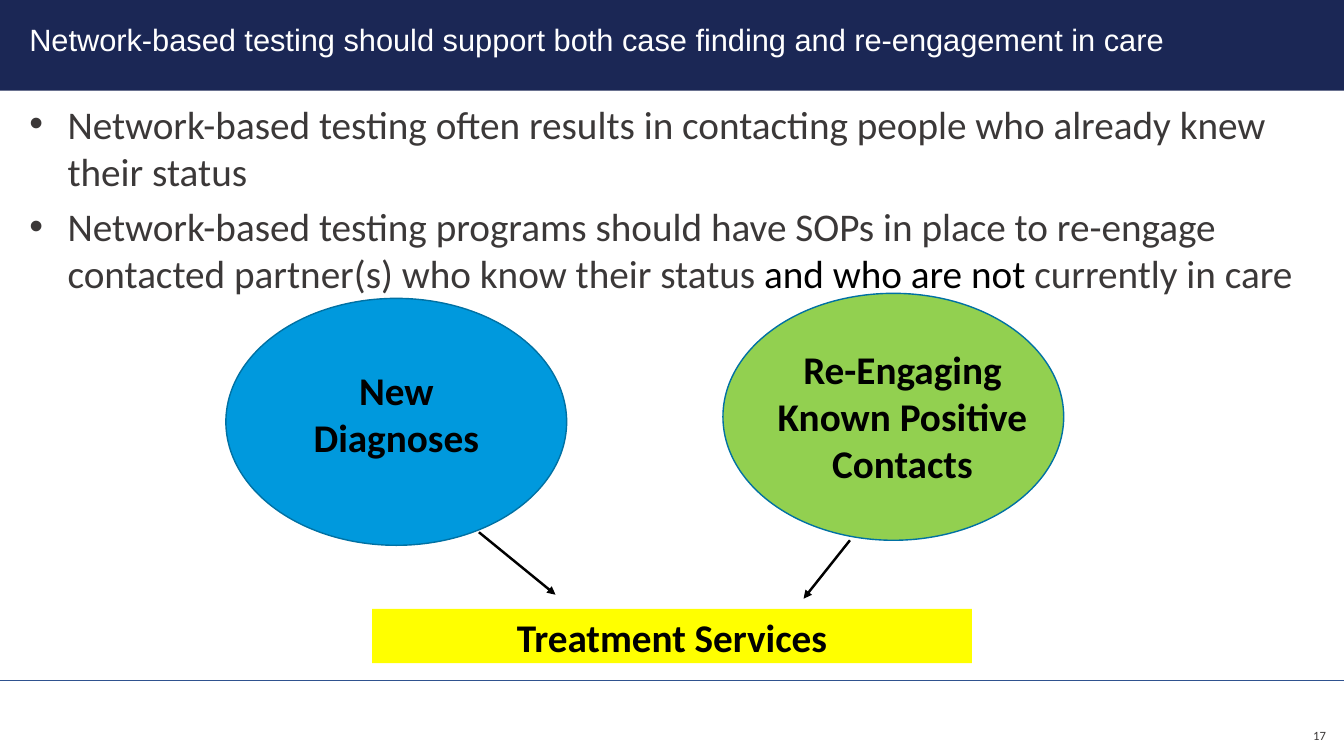
from lxml import etree
from pptx import Presentation
from pptx.dml.color import RGBColor
from pptx.enum.shapes import MSO_CONNECTOR, MSO_SHAPE
from pptx.enum.text import MSO_ANCHOR, MSO_AUTO_SIZE, PP_ALIGN
from pptx.oxml.ns import qn
from pptx.util import Inches, Pt

STRAIGHT = MSO_CONNECTOR.STRAIGHT
RECT, ELLIPSE = MSO_SHAPE.RECTANGLE, MSO_SHAPE.OVAL
TOP, MIDDLE = MSO_ANCHOR.TOP, MSO_ANCHOR.MIDDLE
LEFT, CENTER, RIGHT = PP_ALIGN.LEFT, PP_ALIGN.CENTER, PP_ALIGN.RIGHT
NO_AUTOFIT = MSO_AUTO_SIZE.NONE

NAVY = RGBColor(0x1B, 0x27, 0x55)
GRAY = RGBColor(0x3B, 0x38, 0x38)
RULE_BLUE = RGBColor(0x2F, 0x52, 0x8F)
BLUE = RGBColor(0x00, 0x99, 0xDD)
OUTLINE_BLUE = RGBColor(0x00, 0x71, 0xA3)
GREEN = RGBColor(0x92, 0xD0, 0x50)
YELLOW = RGBColor(0xFF, 0xFF, 0x00)
BLACK = RGBColor(0, 0, 0)
WHITE = RGBColor(0xFF, 0xFF, 0xFF)

SLIDE_W, SLIDE_H = 13.33, 7.5
TITLE = "Network-based testing should support both case finding and re-engagement in care"
BULLETS = [
    [("Network-based testing often results in contacting people who already knew "
      "their status", GRAY)],
    [("Network-based testing programs should have SOPs in place to re-engage "
      "contacted partner(s) who know their status ", GRAY),
     ("and who are not", BLACK),
     (" currently in care", GRAY)],
]


def inches(*values):
    return [Inches(v) for v in values]


def add_run(p, text, size, color, font="Calibri", bold=False):
    r = p.add_run()
    r.text = text
    r.font.name = font
    r.font.size = Pt(size)
    r.font.bold = bold
    r.font.color.rgb = color


def add_box(slide, kind, at, fill, line=None):
    sp = slide.shapes.add_shape(kind, *inches(*at))
    sp.shadow.inherit = False
    sp.fill.solid()
    sp.fill.fore_color.rgb = fill
    if line is None:
        sp.line.fill.background()
    else:
        sp.line.color.rgb = line
        sp.line.width = Pt(1)
    return sp


def set_label(sp, text, size=28, color=BLACK, bold=True, align=CENTER, anchor=TOP):
    tf = sp.text_frame
    tf.word_wrap = True
    tf.vertical_anchor = anchor
    p = tf.paragraphs[0]
    p.alignment = align
    add_run(p, text, size, color, bold=bold)


def add_label(slide, at, text, **style):
    set_label(slide.shapes.add_textbox(*inches(*at)), text, **style)


def add_line(slide, start, end, color, width, arrow=False):
    cx = slide.shapes.add_connector(STRAIGHT, *inches(*start, *end))
    cx.line.color.rgb = color
    cx.line.width = Pt(width)
    if arrow:
        ln = cx.line._get_or_add_ln()
        etree.SubElement(ln, qn("a:tailEnd"), type="triangle")
    etree.SubElement(cx._element.spPr, qn("a:effectLst"))


def place_placeholder(sp, at, anchor):
    """Move a placeholder and return its frame without margins."""
    sp.left, sp.top, sp.width, sp.height = inches(*at)
    tf = sp.text_frame
    tf.margin_left = tf.margin_right = tf.margin_top = tf.margin_bottom = 0
    tf.word_wrap = True
    tf.auto_size = NO_AUTOFIT
    tf.vertical_anchor = anchor
    return tf


def fill_title(slide):
    tf = place_placeholder(slide.shapes.title, (0.29, 0.21, 12.79, 0.37), TOP)
    p = tf.paragraphs[0]
    p.alignment = LEFT
    add_run(p, TITLE, 22, WHITE, font="Arial")


def fill_bullets(slide):
    tf = place_placeholder(slide.placeholders[1], (0.29, 0.99, 12.7, 1.97), TOP)
    for i, runs in enumerate(BULLETS):
        p = tf.add_paragraph() if i else tf.paragraphs[0]
        pPr = p._p.get_or_add_pPr()
        pPr.set("marL", str(Inches(0.38)))
        pPr.set("indent", str(-Inches(0.38)))
        etree.SubElement(pPr, qn("a:buFont"), typeface="Arial")
        etree.SubElement(pPr, qn("a:buChar"), char="•")
        p.space_before = Pt(0)
        p.space_after = Pt(6)
        for text, color in runs:
            add_run(p, text, 28, color)


def add_frame(slide):
    """Header band behind the title, footer rule and slide number."""
    band = add_box(slide, RECT, (0, 0, SLIDE_W, 0.9), NAVY)
    slide.shapes._spTree.insert(2, band._element)
    add_line(slide, (0, 6.75), (SLIDE_W, 6.75), RULE_BLUE, 0.5)
    add_label(slide, (12.61, 7.1, 0.64, 0.4), "17", size=9, color=GRAY,
              bold=False, align=RIGHT, anchor=MIDDLE)


def add_diagram(slide):
    add_box(slide, ELLIPSE, (2.24, 2.96, 3.38, 2.45), BLUE, OUTLINE_BLUE)
    add_label(slide, (2.79, 3.58, 2.28, 0.98), "New Diagnoses")
    add_box(slide, ELLIPSE, (7.17, 2.91, 3.38, 2.45), GREEN, OUTLINE_BLUE)
    add_label(slide, (7.56, 3.38, 2.78, 1.42), "Re-Engaging Known Positive Contacts")
    services = add_box(slide, RECT, (3.69, 6.04, 5.95, 0.54), YELLOW)
    set_label(services, "Treatment Services")
    add_line(slide, (4.75, 5.28), (5.51, 5.9), BLACK, 1.75, arrow=True)
    add_line(slide, (8.43, 5.36), (7.97, 5.94), BLACK, 1.75, arrow=True)


def main():
    prs = Presentation()
    prs.slide_width, prs.slide_height = inches(SLIDE_W, SLIDE_H)
    slide = prs.slides.add_slide(prs.slide_layouts[1])
    add_frame(slide)
    fill_title(slide)
    add_diagram(slide)
    fill_bullets(slide)
    # The list text lies over the tops of the ellipses.
    slide.shapes._spTree.append(slide.placeholders[1]._element)
    prs.save("out.pptx")


if __name__ == "__main__":
    main()
